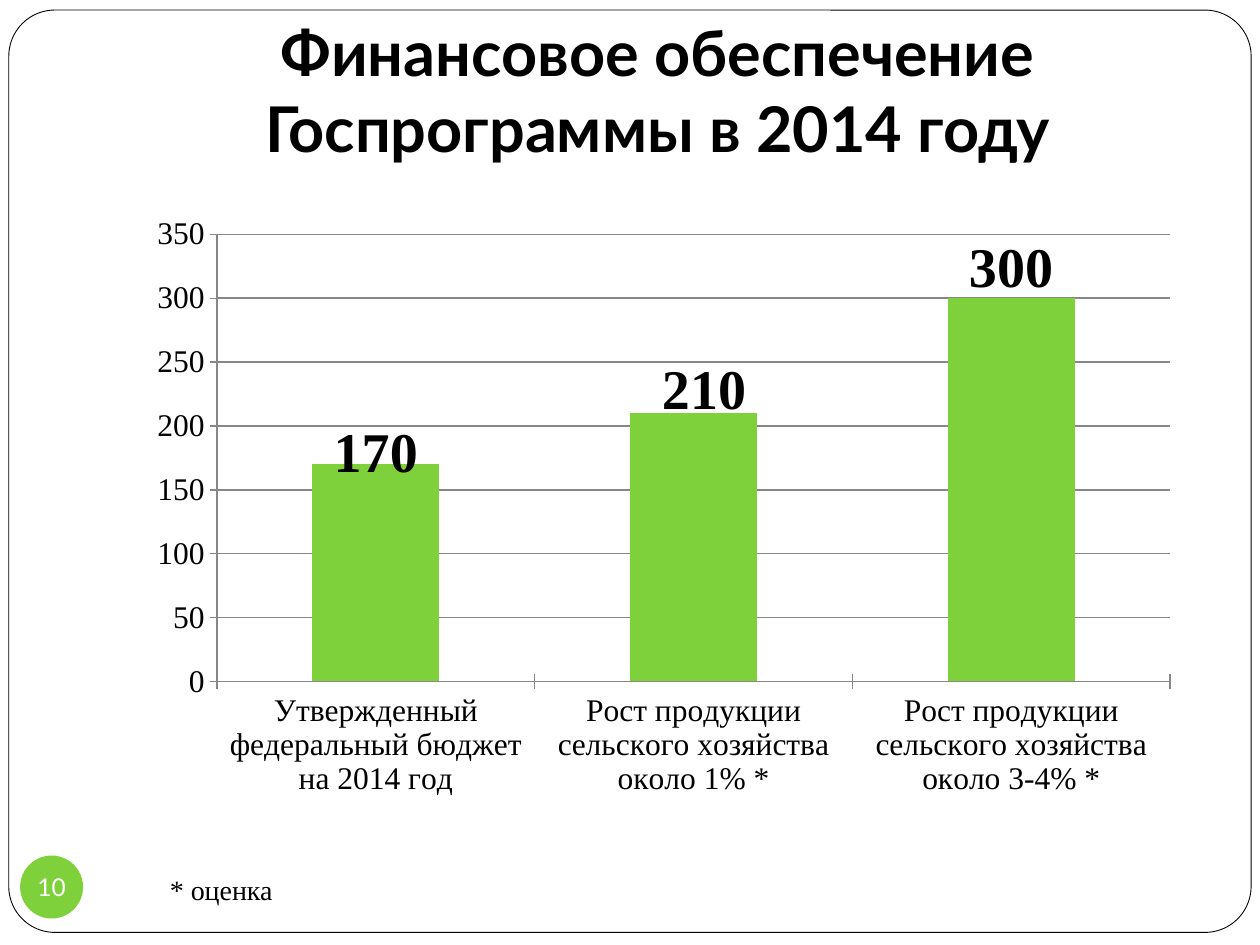
import pptx
import pptx.util
import pptx.oxml
import pptx.chart.data
import pptx.dml.color
import pptx.enum.chart
import pptx.enum.shapes
import pptx.enum.text

Inches = pptx.util.Inches
Pt = pptx.util.Pt
RGBColor = pptx.dml.color.RGBColor
Shape = pptx.enum.shapes.MSO_SHAPE
Anchor = pptx.enum.text.MSO_ANCHOR
Align = pptx.enum.text.PP_ALIGN
Fit = pptx.enum.text.MSO_AUTO_SIZE

BLACK = RGBColor(0x00, 0x00, 0x00)
WHITE = RGBColor(0xFF, 0xFF, 0xFF)
GREEN = RGBColor(0x7F, 0xD1, 0x3B)
GRAY = RGBColor(0x87, 0x87, 0x87)
SANS = "Lato"
SERIF = "Times New Roman"


def style(font, name, size, color, bold=False):
    font.name = name
    font.size = Pt(size)
    font.color.rgb = color
    font.bold = bold


def layout(**parts):
    inner = "".join(f'<c:{tag} val="{value}"/>' for tag, value in parts.items())
    return pptx.oxml.parse_xml(
        '<c:layout xmlns:c="http://schemas.openxmlformats.org/drawingml/2006/chart">'
        f"<c:manualLayout>{inner}</c:manualLayout></c:layout>"
    )


deck = pptx.Presentation()
deck.slide_width = Inches(10)
deck.slide_height = Inches(7.5)
slide = deck.slides.add_slide(deck.slide_layouts[5])
shapes = slide.shapes

title = shapes.title
title.left, title.top = Inches(0.78), Inches(0.23)
title.width, title.height = Inches(8.88), Inches(1.18)
frame = title.text_frame
frame.text = "Финансовое обеспечение Госпрограммы в 2014 году"
frame.auto_size = Fit.NONE
frame.vertical_anchor = Anchor.BOTTOM
frame.margin_bottom = Inches(0.1)
frame.paragraphs[0].alignment = Align.CENTER
style(frame.paragraphs[0].font, SANS, 36, BLACK, True)

border = shapes.add_shape(
    Shape.ROUNDED_RECTANGLE, Inches(0.07), Inches(0.08), Inches(9.86), Inches(7.32)
)
border.adjustments[0] = 0.05
border.shadow.inherit = False
border.fill.solid()
border.fill.fore_color.rgb = WHITE
border.line.color.rgb = BLACK
border.line.width = Pt(0.5)
title.element.addprevious(border.element)

data = pptx.chart.data.CategoryChartData()
data.categories = [
    "Утвержденный федеральный бюджет на 2014 год",
    "Рост продукции сельского хозяйства около 1% *",
    "Рост продукции сельского хозяйства около 3-4% *",
]
data.add_series("Series 1", [170, 210, 300])
chart = shapes.add_chart(
    pptx.enum.chart.XL_CHART_TYPE.COLUMN_CLUSTERED,
    Inches(1), Inches(1.58), Inches(8.5), Inches(5), data,
).chart
chart.has_legend = False
chart.has_title = False
style(chart.font, SERIF, 18, BLACK)
area = chart.element.chart.plotArea
for old in area.xpath("c:layout"):
    area.remove(old)
area.insert(0, layout(
    layoutTarget="inner", xMode="edge", yMode="edge", x=0.085, y=0.056, w=0.89, h=0.71
))

for axis in (chart.category_axis, chart.value_axis):
    axis.major_tick_mark = pptx.enum.chart.XL_TICK_MARK.CROSS
    axis.format.line.color.rgb = GRAY
scale = chart.value_axis
scale.minimum_scale, scale.maximum_scale, scale.major_unit = 0, 350, 50
scale.has_major_gridlines = True
scale.major_gridlines.format.line.color.rgb = GRAY

plot = chart.plots[0]
plot.vary_by_categories = False
plot.gap_width = 150
bars = plot.series[0]
bars.format.fill.solid()
bars.format.fill.fore_color.rgb = GREEN
above = pptx.enum.chart.XL_LABEL_POSITION.OUTSIDE_END
labels = bars.data_labels
labels.show_value = True
labels.position = above
style(labels.font, SERIF, 32, BLACK, True)
for index, (x, y) in enumerate([(0, 0.04), (0.01, 0.02), (0, 0.01)]):
    label = bars.points[index].data_label
    label.position = above
    style(label.font, SERIF, 32, BLACK, True)
    mark = area.xpath(f".//c:dLbl/c:idx[@val='{index}']")[0]
    mark.addnext(layout(x=x, y=y))

badge = shapes.add_shape(
    Shape.OVAL, Inches(0.16), Inches(6.79), Inches(0.5), Inches(0.5)
)
badge.shadow.inherit = False
badge.fill.solid()
badge.fill.fore_color.rgb = GREEN
badge.line.fill.background()
frame = badge.text_frame
frame.text = "10"
frame.word_wrap = False
frame.vertical_anchor = Anchor.MIDDLE
frame.margin_left = frame.margin_right = frame.margin_top = frame.margin_bottom = 0
frame.paragraphs[0].alignment = Align.CENTER
style(frame.paragraphs[0].font, SANS, 14, WHITE)

note = shapes.add_textbox(Inches(1.25), Inches(6.88), Inches(2.73), Inches(0.37))
frame = note.text_frame
frame.word_wrap = True
frame.auto_size = Fit.SHAPE_TO_FIT_TEXT
frame.text = "* оценка"
style(frame.paragraphs[0].font, SERIF, 16, BLACK)

deck.save("out.pptx")
